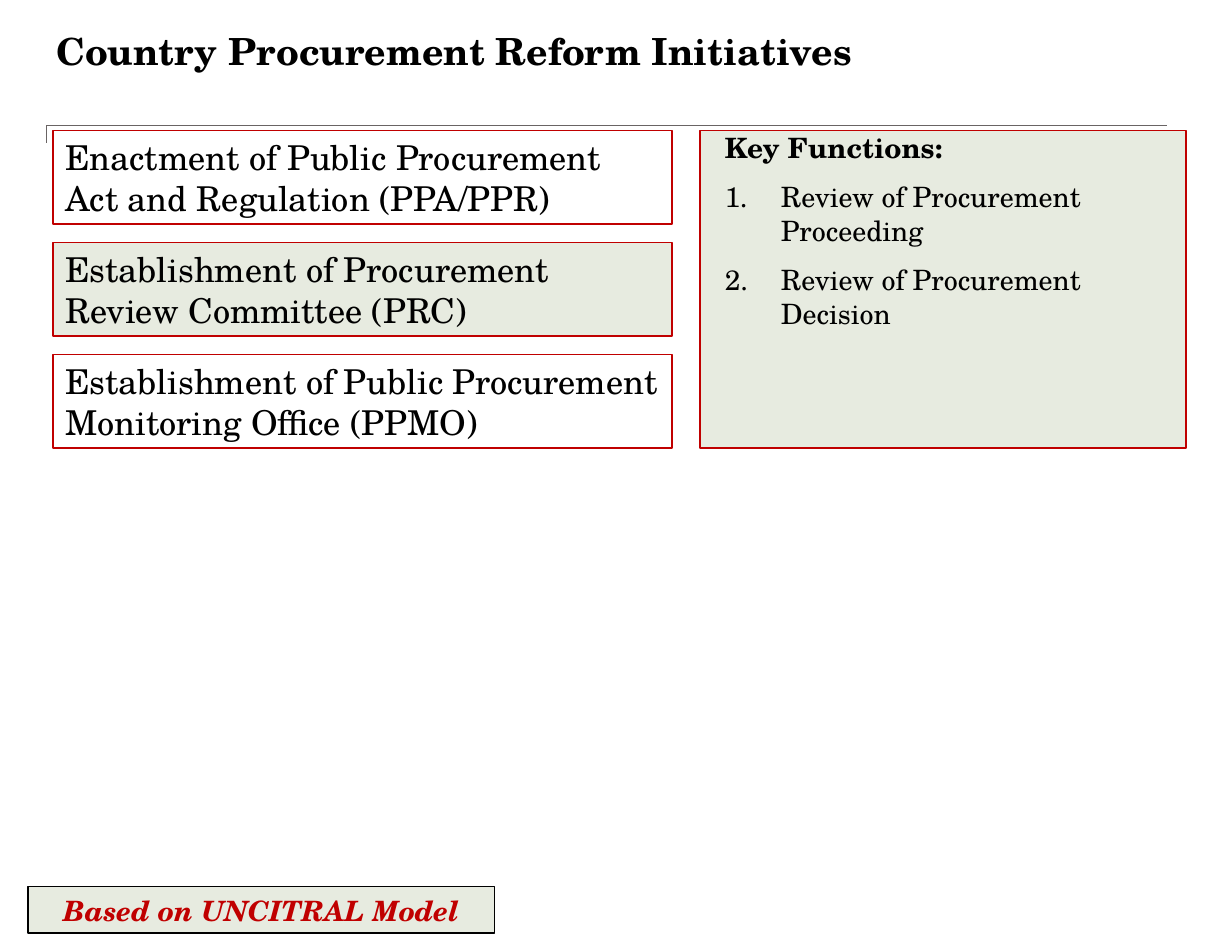
from pptx import Presentation
from pptx.dml.color import RGBColor
from pptx.enum.shapes import MSO_CONNECTOR, MSO_SHAPE
from pptx.enum.text import MSO_ANCHOR, PP_ALIGN
from pptx.oxml.ns import qn
from pptx.util import Pt
from lxml.etree import SubElement

COLORS = {"text": "000000", "accent": "C00000", "panel": "E7EBE0", "rule": "696464"}


class SlideBuilder:
    font_name = "TeX Gyre Schola"

    def __init__(self, slide):
        self.slide = slide

    def color(self, name):
        return RGBColor.from_string(COLORS[name])

    def format_text(self, paragraph, size, color="text", bold=False, italic=False):
        for run in paragraph.runs:
            font = run.font
            font.name = self.font_name
            font.size = Pt(size)
            font.bold = bold
            font.italic = italic
            font.color.rgb = self.color(color)

    def set_frame(self, shape, anchor, horizontal=0, vertical=0):
        frame = shape.text_frame
        frame.word_wrap = True
        frame.vertical_anchor = anchor
        frame.margin_left = frame.margin_right = Pt(horizontal)
        frame.margin_top = frame.margin_bottom = Pt(vertical)
        return frame

    def title(self, text, left, top, width, height):
        shape = self.slide.shapes.add_textbox(Pt(left), Pt(top), Pt(width), Pt(height))
        frame = self.set_frame(shape, MSO_ANCHOR.TOP)
        frame.text = text
        self.format_text(frame.paragraphs[0], 24, bold=True)

    def corner_rule(self, left, bottom, right, top):
        connector = self.slide.shapes.add_connector(
            MSO_CONNECTOR.ELBOW, Pt(left), Pt(bottom), Pt(right), Pt(top))
        connector.line.color.rgb = self.color("rule")
        connector.line.width = Pt(1)
        properties = connector._element.spPr
        adjustments = properties.find(qn("a:prstGeom")).get_or_add_avLst()
        SubElement(adjustments, qn("a:gd"), name="adj1", fmla="val 0")
        SubElement(properties, qn("a:effectLst"))

    def rectangle(self, left, top, width, height, fill=None, line="accent"):
        shape = self.slide.shapes.add_shape(
            MSO_SHAPE.RECTANGLE, Pt(left), Pt(top), Pt(width), Pt(height))
        shape.shadow.inherit = False
        if fill:
            shape.fill.solid()
            shape.fill.fore_color.rgb = self.color(fill)
        else:
            shape.fill.background()
        shape.line.color.rgb = self.color(line)
        shape.line.width = Pt(1)
        return shape

    def label(self, text, box, size, align=PP_ALIGN.LEFT, fill=None, line="accent", **style):
        shape = self.rectangle(*box, fill=fill, line=line)
        frame = self.set_frame(shape, MSO_ANCHOR.MIDDLE, 8, 4)
        frame.text = text
        paragraph = frame.paragraphs[0]
        paragraph.alignment = align
        self.format_text(paragraph, size, **style)

    def numbered_panel(self, heading, items, box):
        shape = self.rectangle(*box, fill="panel")
        frame = self.set_frame(shape, MSO_ANCHOR.TOP)
        frame.text = "\n".join([heading, *items])
        for index, paragraph in enumerate(frame.paragraphs):
            paragraph.alignment = PP_ALIGN.LEFT
            paragraph.level = 1
            paragraph.space_before = Pt(6.7)
            paragraph.space_after = Pt(3.3)
            properties = paragraph._p.get_or_add_pPr()
            properties.set("marL", str(Pt(52)))
            properties.set("indent", str(Pt(-36)))
            if index:
                SubElement(properties, qn("a:buFont"), typeface="+mj-lt")
                SubElement(properties, qn("a:buAutoNum"), type="arabicPeriod")
            else:
                SubElement(properties, qn("a:buNone"))
            self.format_text(paragraph, 18, bold=index == 0)


def main():
    presentation = Presentation()
    presentation.slide_width = Pt(792)
    presentation.slide_height = Pt(612)
    slide = presentation.slides.add_slide(presentation.slide_layouts[6])
    builder = SlideBuilder(slide)

    builder.corner_rule(30, 92, 750, 80.6)
    builder.title("Country Procurement Reform Initiatives", 36, 18, 708, 72)

    initiatives = [
        ("Enactment of Public Procurement Act and Regulation (PPA/PPR)", None),
        ("Establishment of Procurement Review Committee (PRC)", "panel"),
        ("Establishment of Public Procurement Monitoring Office (PPMO)", None),
    ]
    for row, (text, fill) in enumerate(initiatives):
        builder.label(text, (34, 84 + 72 * row, 398, 60), 22, fill=fill)

    builder.numbered_panel(
        "Key Functions:",
        ["Review of Procurement Proceeding", "Review of Procurement Decision"],
        (450, 84, 312.5, 204))
    builder.label("Based on UNCITRAL Model", (18, 570, 300, 30), 18, PP_ALIGN.CENTER,
                  fill="panel", line="text", color="accent", bold=True, italic=True)

    presentation.save("out.pptx")


if __name__ == "__main__":
    main()
